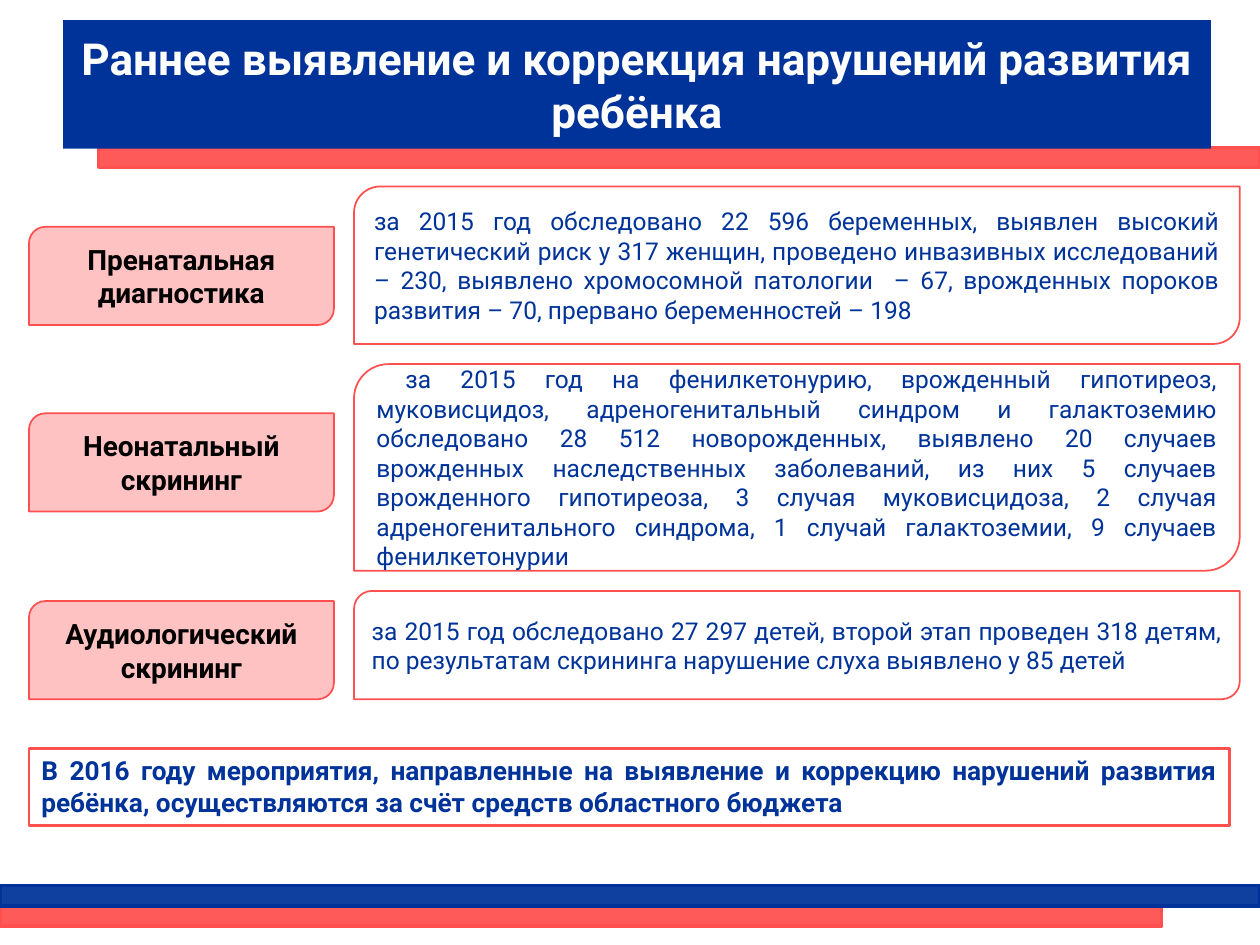
import pptx
import pptx.util
import pptx.dml.color
import pptx.enum.shapes
import pptx.enum.text
import pptx.oxml.ns
import lxml.etree

Inches = pptx.util.Inches
Pt = pptx.util.Pt
Shape = pptx.enum.shapes.MSO_SHAPE
Align = pptx.enum.text.PP_ALIGN
Anchor = pptx.enum.text.MSO_ANCHOR

COLORS = {
    "navy": "003399",
    "coral": "FF5050",
    "red": "FF0000",
    "white": "FFFFFF",
    "black": "000000",
}


def rgb(name):
    return pptx.dml.color.RGBColor.from_string(COLORS[name])


def write(frame, text, size=14, color="navy", bold=False,
          align=Align.JUSTIFY, anchor=Anchor.MIDDLE, indent=0, font="Roboto"):
    frame.word_wrap = True
    frame.vertical_anchor = anchor
    para = frame.paragraphs[0]
    para.alignment = align
    if indent:
        para._p.get_or_add_pPr().set("indent", str(Inches(indent)))
    run = para.add_run()
    run.text = text
    run.font.name = font
    run.font.size = Pt(size)
    run.font.bold = bold
    run.font.color.rgb = rgb(color)


class Deck:
    left = 0.23
    label_size = (2.42, 0.78)
    fact_left = 2.81
    fact_width = 7.03

    def __init__(self):
        self.show = pptx.Presentation()
        self.show.slide_width = Inches(10)
        self.show.slide_height = Inches(7.5)
        self.slide = self.show.slides.add_slide(self.show.slide_layouts[6])

    def box(self, kind, place, fill, line=None, width=1, alpha=None):
        shape = self.slide.shapes.add_shape(kind, *map(Inches, place))
        shape.shadow.inherit = False
        shape.fill.solid()
        shape.fill.fore_color.rgb = rgb(fill)
        if alpha is not None:
            color = shape.fill._xPr.find(".//" + pptx.oxml.ns.qn("a:srgbClr"))
            lxml.etree.SubElement(color, pptx.oxml.ns.qn("a:alpha"),
                                  val=str(alpha * 1000))
        if line:
            shape.line.color.rgb = rgb(line)
            shape.line.width = Pt(width)
        else:
            shape.line.fill.background()
        return shape

    def stripe(self, left, top, width, color):
        self.box(Shape.RECTANGLE, (left, top, width, 0.16), color, color, 2, 94)

    def title(self, text):
        shape = self.box(Shape.RECTANGLE, (0.5, 0.16, 9.11, 1.02), "navy")
        write(shape.text_frame, text, size=25.2, color="white", bold=True,
              align=Align.CENTER)

    def label(self, top, text):
        shape = self.box(Shape.ROUND_2_DIAG_RECTANGLE,
                         (self.left, top, *self.label_size),
                         "red", "coral", alpha=24)
        write(shape.text_frame, text, size=16, color="black", bold=True,
              align=Align.CENTER)

    def fact(self, top, height, text, indent):
        shape = self.box(Shape.ROUND_2_DIAG_RECTANGLE,
                         (self.fact_left, top, self.fact_width, height),
                         "white", "coral")
        write(shape.text_frame, text, indent=indent)

    def note(self, text):
        shape = self.box(Shape.RECTANGLE, (self.left, 5.94, 9.53, 0.61),
                         "white", "coral", 1.5)
        write(shape.text_frame, text, size=15, bold=True, anchor=Anchor.TOP)


ROWS = [
    ("Пренатальная диагностика", 1.8, 1.48, 1.25, 0,
     "за 2015 год обследовано 22 596 беременных, выявлен высокий "
     "генетический риск у 317 женщин, проведено инвазивных исследований "
     "– 230, выявлено хромосомной патологии  – 67, врожденных пороков "
     "развития – 70, прервано беременностей – 198"),
    ("Неонатальный скрининг", 3.28, 2.89, 1.64, 0.23,
     "за 2015 год на фенилкетонурию, врожденный гипотиреоз, "
     "муковисцидоз, адреногенитальный синдром и галактоземию "
     "обследовано 28 512 новорожденных, выявлено 20 случаев "
     "врожденных наследственных заболеваний, из них 5 случаев "
     "врожденного гипотиреоза, 3 случая муковисцидоза, 2 случая "
     "адреногенитального синдрома, 1 случай галактоземии, 9 случаев "
     "фенилкетонурии"),
    ("Аудиологический скрининг", 4.77, 4.69, 0.86, 0,
     "за 2015 год обследовано 27 297 детей, второй этап проведен 318 детям, "
     "по результатам скрининга нарушение слуха выявлено у 85 детей"),
]


def main():
    deck = Deck()
    deck.stripe(0.78, 1.17, 9.22, "coral")
    deck.title("Раннее выявление и коррекция нарушений развития ребёнка")
    for name, label_top, top, height, indent, text in ROWS:
        deck.label(label_top, name)
        deck.fact(top, height, text, indent)
    deck.note("В 2016 году мероприятия, направленные на выявление и коррекцию "
              "нарушений развития ребёнка, осуществляются за счёт средств "
              "областного бюджета")
    deck.stripe(0, 7.19, 9.22, "coral")
    deck.stripe(0, 7.03, 10, "navy")
    deck.show.save("out.pptx")


if __name__ == "__main__":
    main()
